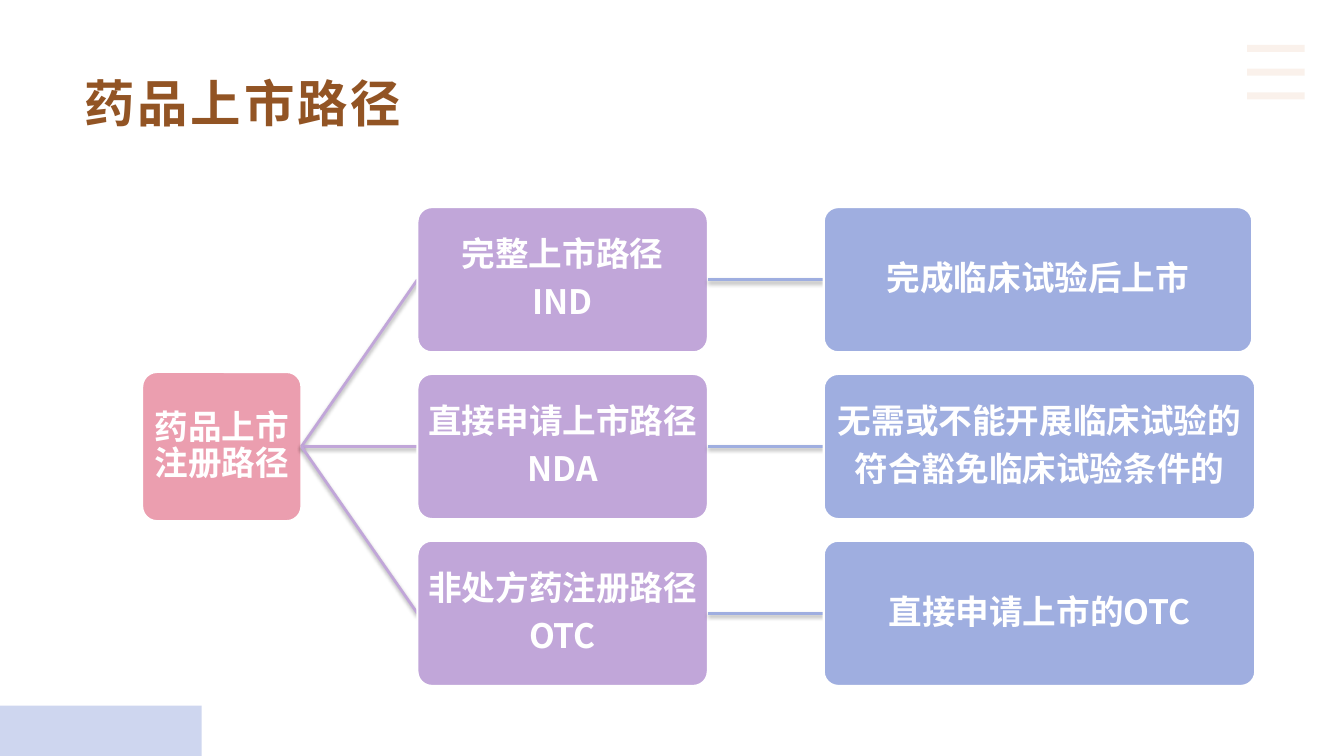
import math

from lxml import etree
from pptx import Presentation, util as u
from pptx.dml.color import RGBColor
from pptx.enum import shapes, text
from pptx.oxml.ns import qn

TITLE = "药品上市路径"
ROOT = ["药品上市注册路径"]
PATHWAYS = [  # (pathway lines, outcome lines, outcome width)
    (["完整上市路径", "IND"], ["完成临床试验后上市"], 4.25),
    (["直接申请上市路径", "NDA"], ["无需或不能开展临床试验的", "符合豁免临床试验条件的"], 4.28),
    (["非处方药注册路径", "OTC"], ["直接申请上市的OTC"], 4.28),
]

FONT = "Noto Sans CJK SC"
WHITE = RGBColor(0xFF, 0xFF, 0xFF)
BLACK = RGBColor(0, 0, 0)
BROWN = RGBColor(0x92, 0x54, 0x24)
TAN = RGBColor(0xE2, 0xB0, 0x8A)
PINK = RGBColor(0xEB, 0x9E, 0xAF)
PURPLE = RGBColor(0xC1, 0xA6, 0xD9)
BLUE = RGBColor(0x9F, 0xAE, 0xE0)

WIDTH, HEIGHT = 13.33, 7.5
ROOT_LEFT, ROOT_WIDTH, ROOT_HEIGHT = 1.41, 1.58, 1.48
PATHWAY_LEFT, PATHWAY_WIDTH = 4.14, 2.88
OUTCOME_LEFT = 8.17
BOX_HEIGHT = 1.44
MIDDLE, ROW_STEP = 4.43, 1.655

presentation = Presentation()
presentation.slide_width, presentation.slide_height = u.Inches(WIDTH), u.Inches(HEIGHT)
slide = presentation.slides.add_slide(presentation.slide_layouts[6])


def set_alpha(fill, percent):
    """Make a solid colour, given by its a:solidFill parent, partly transparent."""
    color = fill.find(".//" + qn("a:srgbClr"))
    etree.SubElement(color, qn("a:alpha"), val=str(percent * 1000))


def style_run(run, size, color):
    run.font.name, run.font.size, run.font.bold = FONT, u.Pt(size), True
    run.font.color.rgb = color
    etree.SubElement(run.font._element, qn("a:ea"), typeface=FONT)


def add_line(color, width, ends=(0, 0, 0, 0), shadow=False):
    line = slide.shapes.add_connector(
        shapes.MSO_CONNECTOR.STRAIGHT, *[u.Inches(value) for value in ends])
    line.line.color.rgb, line.line.width = color, u.Pt(width)
    effects = etree.SubElement(line._element.spPr, qn("a:effectLst"))
    if shadow:
        outer = etree.SubElement(
            effects, qn("a:outerShdw"), blurRad=str(u.Pt(3)), dist=str(u.Pt(2)),
            dir="5400000", rotWithShape="0")
        etree.SubElement(outer, qn("a:srgbClr"), val=str(BLACK))
        set_alpha(outer, 35)
    return line


def add_box(lines, left, middle, width, height, color):
    box = slide.shapes.add_shape(
        shapes.MSO_SHAPE.ROUNDED_RECTANGLE, u.Inches(left), u.Inches(middle - height / 2),
        u.Inches(width), u.Inches(height))
    box.adjustments[0] = 0.1
    box.shadow.inherit = False
    box.fill.solid()
    box.fill.fore_color.rgb = color
    box.line.color.rgb, box.line.width = WHITE, u.Pt(1.5)
    frame = box.text_frame
    frame.word_wrap = True
    frame.vertical_anchor = text.MSO_ANCHOR.MIDDLE
    frame.margin_left = frame.margin_right = u.Inches(0.06)
    frame.margin_top = frame.margin_bottom = u.Inches(0.06)
    frame.text = "\n".join(lines)
    for paragraph in frame.paragraphs:
        paragraph.alignment = text.PP_ALIGN.CENTER
        paragraph.line_spacing, paragraph.space_after = 0.9, u.Pt(8.4)
        style_run(paragraph.runs[0], 24, WHITE)
    return box


def add_branch(parent, *box_details):
    """Add a box joined to the right side of its parent by a line beneath it."""
    line = add_line(box_details[-1], 2, shadow=True)
    box = add_box(*box_details)
    line.begin_connect(parent, 3)
    line.end_connect(box, 1)
    return box


def add_corner_dome(center_x, center_y, radius):
    """Draw the part of a circle that rises above the slide's bottom edge."""
    start = math.asin((center_y - HEIGHT) / radius)
    steps = 60
    angles = [start + (math.pi - 2 * start) * step / steps for step in range(steps + 1)]
    points = [(center_x + radius * math.cos(angle), center_y - radius * math.sin(angle))
              for angle in angles]
    builder = slide.shapes.build_freeform(*points[0], scale=u.Inches(1))
    builder.add_line_segments(points[1:], close=True)
    dome = builder.convert_to_shape()
    dome.shadow.inherit = False
    dome.fill.solid()
    dome.fill.fore_color.rgb = BLUE
    set_alpha(dome._element.spPr.find(qn("a:solidFill")), 50)
    dome.line.fill.background()


for bar in range(3):
    y = 0.48 + bar * 0.235
    menu_bar = add_line(TAN, 5, (12.37, y, 12.94, y))
    set_alpha(menu_bar.line._ln, 17)

add_corner_dome(0.96, 7.52, 0.79)

title = slide.shapes.add_textbox(u.Inches(0.74), u.Inches(0.67), u.Inches(9.4), u.Inches(1.44))
title.text_frame.word_wrap = True
title.text_frame.text = TITLE
title_run = title.text_frame.paragraphs[0].runs[0]
style_run(title_run, 36, BROWN)
title_run.font._element.set("spc", "200")

root = add_box(ROOT, ROOT_LEFT, MIDDLE, ROOT_WIDTH, ROOT_HEIGHT, PINK)
for row, (pathway_lines, outcome_lines, outcome_width) in enumerate(PATHWAYS):
    middle = MIDDLE + (row - 1) * ROW_STEP
    pathway = add_branch(
        root, pathway_lines, PATHWAY_LEFT, middle, PATHWAY_WIDTH, BOX_HEIGHT, PURPLE)
    add_branch(pathway, outcome_lines, OUTCOME_LEFT, middle, outcome_width, BOX_HEIGHT, BLUE)

presentation.save("out.pptx")
